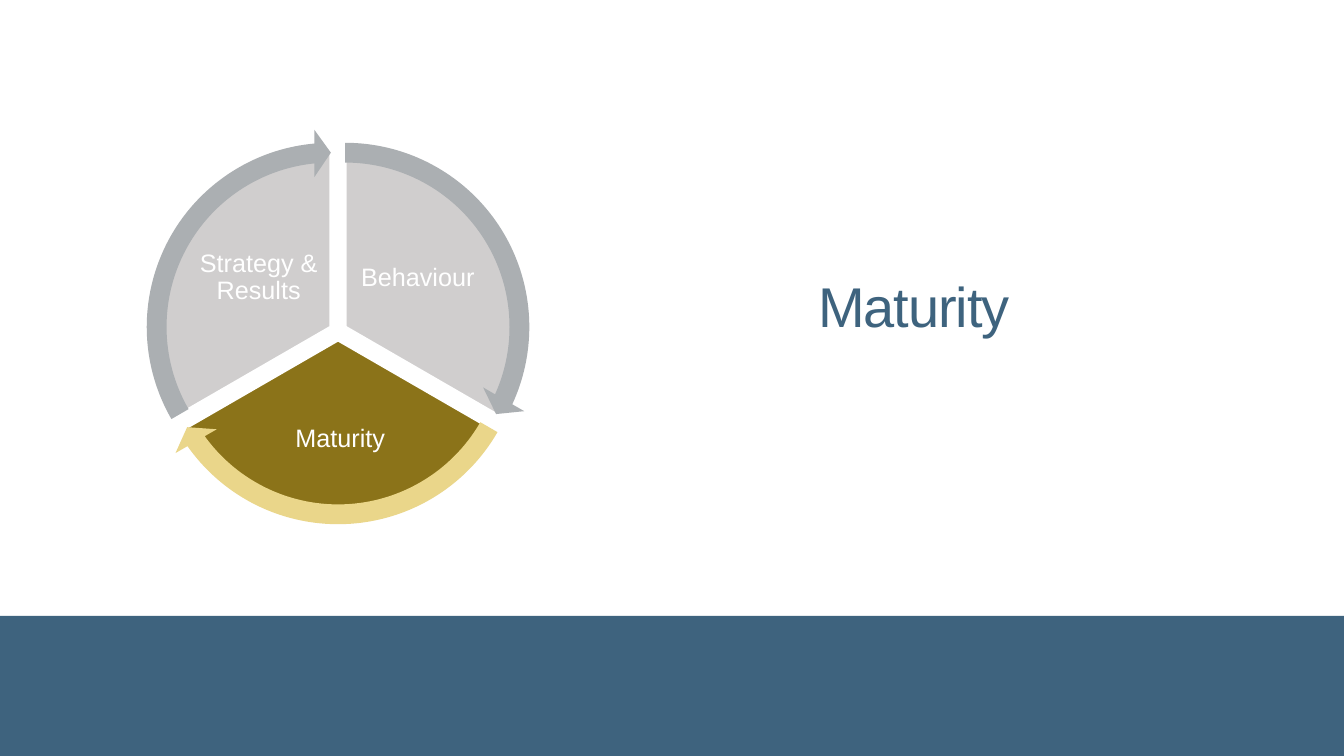
from pptx import Presentation
from pptx.dml.color import RGBColor
from pptx.enum.shapes import MSO_SHAPE
from pptx.enum.text import MSO_ANCHOR, PP_ALIGN
from pptx.util import Cm, Pt

RECT, PIE, ARROW = MSO_SHAPE.RECTANGLE, MSO_SHAPE.PIE, MSO_SHAPE.CIRCULAR_ARROW
TOP, MIDDLE = MSO_ANCHOR.TOP, MSO_ANCHOR.MIDDLE
CENTER = PP_ALIGN.CENTER

THEME = {
    "font": "Arial",
    "title_size": Pt(40),
    "label_size": Pt(18),
    "blue": RGBColor.from_string("3E637E"),
    "white": RGBColor.from_string("FFFFFF"),
    "pale": RGBColor.from_string("D0CECE"),
    "grey": RGBColor.from_string("ABAFB2"),
    "olive": RGBColor.from_string("8B7319"),
    "sand": RGBColor.from_string("EAD68A"),
}


def add_shape(shapes, kind, box, color, adjustments=()):
    sp = shapes.add_shape(kind, *map(Cm, box))
    sp.shadow.inherit = False
    sp.fill.solid()
    sp.fill.fore_color.rgb = THEME[color]
    sp.line.fill.background()
    for i, value in enumerate(adjustments):
        sp.adjustments[i] = value
    return sp


def add_text(shapes, text, box, size, color, anchor, inset):
    tf = shapes.add_textbox(*map(Cm, box)).text_frame
    tf.word_wrap = True
    tf.vertical_anchor = anchor
    tf.margin_left = tf.margin_right = tf.margin_top = tf.margin_bottom = Cm(inset)
    p = tf.paragraphs[0]
    p.alignment = CENTER
    r = p.add_run()
    r.text = text
    p.font.name = THEME["font"]
    p.font.size = THEME[size]
    p.font.color.rgb = THEME[color]
    return p


prs = Presentation()
prs.slide_width, prs.slide_height = Cm(33.87), Cm(19.05)
s = prs.slides.add_slide(prs.slide_layouts[6])

title = add_text(s.shapes, "Maturity", (14.07, 6.83, 17.93, 3.18),
                 "title_size", "blue", TOP, 0)
title.runs[0].font._element.set("spc", "-70")
add_shape(s.shapes, RECT, (0, 15.52, 33.87, 3.53), "blue")

PIE_SIZE, ARROW_SIZE = 8.86, 9.98
OVERHANG = (ARROW_SIZE - PIE_SIZE) / 2
HEAD_ANGLE = 3.28
SECTORS = [
    ("Behaviour", 4.27, 3.81, 162, 18, "pale", "grey", (8.94, 5.69, 3.18, 2.64)),
    ("Maturity", 4.09, 4.14, 18, 90, "olive", "sand", (6.2, 9.91, 4.75, 2.34)),
    ("Strategy & Results", 3.91, 3.81, 90, 162, "pale", "grey", (4.93, 5.69, 3.18, 2.64)),
]

cycle = s.shapes.add_group_shape().shapes
for label, x, y, start, end, fill, _, label_box in SECTORS:
    sp = add_shape(cycle, PIE, (x, y, PIE_SIZE, PIE_SIZE), fill, (start, end))
    sp.line.color.rgb = THEME["white"]
    sp.line.width = Pt(2)
    p = add_text(cycle, label, label_box, "label_size", "white", MIDDLE, 0.08)
    p.line_spacing = 0.9

for _, x, y, start, end, _, color, _ in SECTORS:
    add_shape(cycle, ARROW, (x - OVERHANG, y - OVERHANG, ARROW_SIZE, ARROW_SIZE),
              color, (0.05, HEAD_ANGLE, end - HEAD_ANGLE, start, 0.06))

prs.save("out.pptx")
